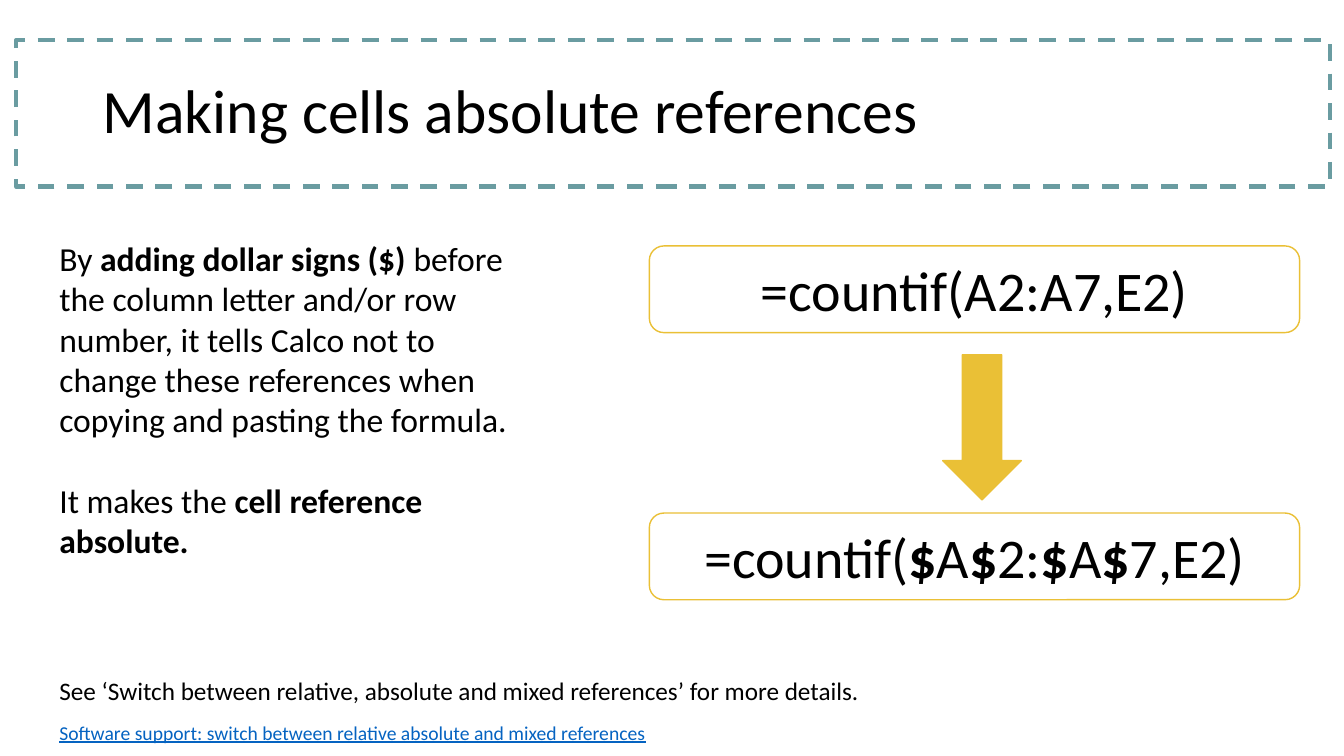
from pptx import Presentation
from pptx.dml.color import RGBColor
from pptx.enum.dml import MSO_LINE
from pptx.enum.shapes import MSO_SHAPE as SHAPE
from pptx.enum.text import MSO_ANCHOR as ANCHOR, PP_ALIGN as ALIGN
from pptx.util import Inches, Pt

BLACK = RGBColor(0x00, 0x00, 0x00)
WHITE = RGBColor(0xFF, 0xFF, 0xFF)
TEAL = RGBColor(0x6A, 0x9C, 0xA1)
GOLD = RGBColor(0xEA, 0xC0, 0x36)
LINK_BLUE = RGBColor(0x05, 0x63, 0xC1)

prs = Presentation()
prs.slide_width, prs.slide_height = Inches(13.33), Inches(7.5)
s = prs.slides.add_slide(prs.slide_layouts[6])


def add_shape(kind, left, top, width, height, line, weight, fill=None):
    sp = s.shapes.add_shape(kind, Inches(left), Inches(top), Inches(width), Inches(height))
    sp.shadow.inherit = False
    if fill is None:
        sp.fill.background()
    else:
        sp.fill.solid()
        sp.fill.fore_color.rgb = fill
    sp.line.color.rgb = line
    sp.line.width = Pt(weight)
    return sp


def add_runs(p, text, size, color=BLACK):
    """Add text to a paragraph; parts between asterisks are bold."""
    for i, part in enumerate(text.split("*")):
        if part:
            r = p.add_run()
            r.text = part
            r.font.name = "Calibri"
            r.font.size = Pt(size)
            r.font.bold = i % 2 == 1
            r.font.color.rgb = color


# Title band
band = add_shape(SHAPE.RECTANGLE, 0.16, 0.4, 13.03, 1.45, TEAL, 3)
band.line.dash_style = MSO_LINE.DASH
title = s.shapes.add_textbox(Inches(0.92), Inches(0.4), Inches(11.5), Inches(1.45))
tf = title.text_frame
tf.word_wrap = True
tf.vertical_anchor = ANCHOR.MIDDLE
tf.paragraphs[0].line_spacing = 0.9
add_runs(tf.paragraphs[0], "Making cells absolute references", 44)

# Formula before and after, with the arrow between
for top, formula in ((2.44, "=countif(A2:A7,E2)"),
                     (5.09, "=countif(*$*A*$*2:*$*A*$*7,E2)")):
    sp = add_shape(SHAPE.ROUNDED_RECTANGLE, 6.44, top, 6.45, 0.86, GOLD, 1, WHITE)
    tf = sp.text_frame
    tf.vertical_anchor = ANCHOR.MIDDLE
    tf.paragraphs[0].alignment = ALIGN.CENTER
    add_runs(tf.paragraphs[0], formula, 40)
add_shape(SHAPE.DOWN_ARROW, 9.35, 3.52, 0.78, 1.44, GOLD, 1, GOLD)

# Explanation and further reading
explanation = [
    "By *adding dollar signs ($) *before the column letter and/or row number, "
    "it tells Calco not to change these references when copying and pasting the formula.",
    "It makes the *cell reference absolute.*",
]
see_also = ["See ‘Switch between relative, absolute and mixed references’ for more details."]
support = ["Software support: switch between relative absolute and mixed references"]
for top, width, height, size, color, paragraphs in (
        (2.31, 4.95, 3.74, 24, BLACK, explanation),
        (6.65, 10.09, 0.4, 18, BLACK, see_also),
        (7.1, 11.5, 0.4, 14, LINK_BLUE, support)):
    box = s.shapes.add_textbox(Inches(0.49), Inches(top), Inches(width), Inches(height))
    tf = box.text_frame
    tf.word_wrap = True
    for i, text in enumerate(paragraphs):
        p = tf.add_paragraph() if i else tf.paragraphs[0]
        if i:
            p.space_before = Pt(29)
        add_runs(p, text, size, color)
        if color == LINK_BLUE:
            p.runs[0].font.underline = True

prs.save("out.pptx")
